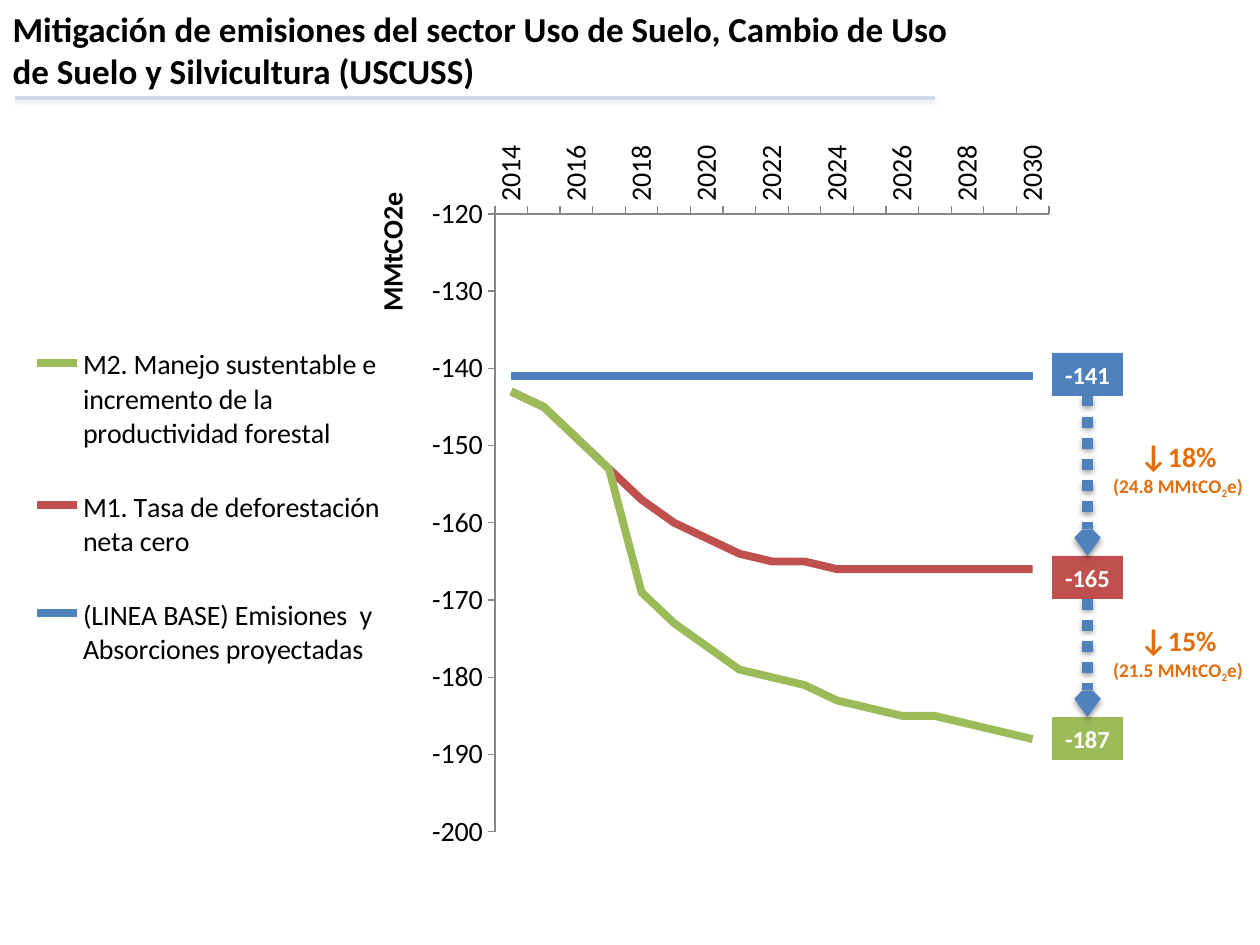
from dataclasses import dataclass

from lxml import etree
from pptx import Presentation
from pptx.chart.data import CategoryChartData
from pptx.dml.color import RGBColor
from pptx.enum.chart import XL_CHART_TYPE, XL_LEGEND_POSITION, XL_TICK_LABEL_POSITION, XL_TICK_MARK
from pptx.enum.dml import MSO_LINE
from pptx.enum.shapes import MSO_CONNECTOR, MSO_SHAPE
from pptx.enum.text import MSO_ANCHOR, MSO_AUTO_SIZE, PP_ALIGN
from pptx.oxml import parse_xml
from pptx.oxml.ns import nsdecls, qn
from pptx.util import Emu, Pt

RECTANGLE, STRAIGHT = MSO_SHAPE.RECTANGLE, MSO_CONNECTOR.STRAIGHT
TOP, MIDDLE = MSO_ANCHOR.TOP, MSO_ANCHOR.MIDDLE
CENTER, LEFT = PP_ALIGN.CENTER, PP_ALIGN.LEFT
TOP_SIDE, BOTTOM_SIDE = 0, 2
PX_PER_INCH = 126
CHART_WIDTH, CHART_HEIGHT = 1062, 724
FONT = "Calibri"
BLUE, RED, GREEN, ORANGE = "4F81BD", "C0504D", "9BBB59", "E46C0A"
BLACK, WHITE, AXIS_GRAY = "000000", "FFFFFF", "868686"
QUARTER_TURN = "-5400000"


@dataclass
class Scenario:
    name: str
    values: list[int]
    color: str
    final_value: str
    box_top: int


@dataclass
class Reduction:
    percent: str
    amount: str
    top: int


YEARS = [str(year) for year in range(2014, 2031)]
SCENARIOS = [
    Scenario("(LINEA BASE) Emisiones  y Absorciones proyectadas",
             [-141] * len(YEARS), BLUE, "-141", 353),
    Scenario("M1. Tasa de deforestación neta cero",
             [-2, -4, -8, -12, -16, -19, -21, -23, -24, -24] + [-25] * 7,
             RED, "-165", 556),
    Scenario("M2. Manejo sustentable e incremento de la productividad forestal",
             [0, 0, 0, 0, -12, -13, -14, -15, -15, -16, -17, -18, -19, -19, -20, -21, -22],
             GREEN, "-187", 717),
]
REDUCTIONS = [Reduction("18%", "24.8", 430), Reduction("15%", "21.5", 614)]


def px(length: int) -> Emu:
    return Emu(round(length * 914400 / PX_PER_INCH))


def rgb(color: str) -> RGBColor:
    return RGBColor.from_string(color)


def apply(target, settings: dict) -> None:
    for attribute, value in settings.items():
        setattr(target, attribute, value)


def style_font(font, size: int, color: str, bold: bool = False) -> None:
    apply(font, {"name": FONT, "size": Pt(size), "bold": bold})
    font.color.rgb = rgb(color)


def add_run(paragraph, text: str, size: int, color: str):
    run = paragraph.add_run()
    run.text = text
    style_font(run.font, size, color, bold=True)
    return run


def add_shadowed_line(slide, start: tuple, end: tuple, width: int):
    line = slide.shapes.add_connector(STRAIGHT, *map(px, start + end))
    line.line.color.rgb = rgb(BLUE)
    line.line.width = Pt(width)
    line._element.spPr.append(parse_xml(
        f'<a:effectLst {nsdecls("a")}><a:outerShdw blurRad="40000" dist="20000" dir="5400000" '
        'rotWithShape="0"><a:srgbClr val="000000"><a:alpha val="38000"/></a:srgbClr>'
        '</a:outerShdw></a:effectLst>'))
    return line


def add_title(slide) -> None:
    title = slide.shapes.title
    apply(title, {"left": 0, "top": 0, "width": px(968), "height": px(98)})
    apply(title.text_frame, {"vertical_anchor": MIDDLE, "auto_size": MSO_AUTO_SIZE.NONE})
    paragraph = title.text_frame.paragraphs[0]
    paragraph.alignment = LEFT
    add_run(paragraph, "Mitigación de emisiones del sector Uso de Suelo, "
            "Cambio de Uso de Suelo y Silvicultura (USCUSS)", 20, BLACK)
    rule = add_shadowed_line(slide, (15, 98), (935, 98), 2)
    rule_color = next(rule._element.spPr.iter(qn("a:srgbClr")))
    etree.SubElement(rule_color, qn("a:alpha")).set("val", "25000")


def place(element, index: int, inner: bool = False, **lengths: int) -> None:
    """Give a chart part a manual layout, in px from the chart's corner."""
    for old_layout in element.findall(qn("c:layout")):
        element.remove(old_layout)
    spans = {"x": CHART_WIDTH, "y": CHART_HEIGHT, "w": CHART_WIDTH, "h": CHART_HEIGHT}
    target = '<c:layoutTarget val="inner"/>' if inner else ""
    modes = "".join(f'<c:{key}Mode val="edge"/>' for key in lengths if key in "xy")
    values = "".join(f'<c:{key} val="{length / spans[key]}"/>' for key, length in lengths.items())
    element.insert(index, parse_xml(
        f'<c:layout {nsdecls("c")}><c:manualLayout>{target}{modes}{values}'
        '</c:manualLayout></c:layout>'))


def turn_upward(body) -> None:
    body.set("rot", QUARTER_TURN)
    body.set("vert", "horz")


def format_axes(chart) -> None:
    years, emissions = chart.category_axis, chart.value_axis
    for axis in (years, emissions):
        axis.has_major_gridlines = False
        axis.format.line.color.rgb = rgb(AXIS_GRAY)
        axis.format.line.width = Pt(0.75)
        style_font(axis.tick_labels.font, 16, BLACK)
    apply(years, {"major_tick_mark": XL_TICK_MARK.INSIDE,
                  "tick_label_position": XL_TICK_LABEL_POSITION.HIGH})
    turn_upward(years._element.find(qn("c:txPr")).find(qn("a:bodyPr")))
    label_skip = parse_xml(f'<c:tickLblSkip {nsdecls("c")} val="2"/>')
    years._element.find(qn("c:noMultiLvlLbl")).addprevious(label_skip)

    apply(emissions, {"minimum_scale": -200, "maximum_scale": -120, "major_unit": 10,
                      "major_tick_mark": XL_TICK_MARK.OUTSIDE})
    apply(emissions.tick_labels, {"number_format": "#,##0", "number_format_is_linked": False})
    axis_title = emissions.axis_title
    add_run(axis_title.text_frame.paragraphs[0], "MMtCO2e", 16, BLACK)
    turn_upward(next(axis_title._element.iter(qn("a:bodyPr"))))
    place(axis_title._element, 1, x=353, y=53)


def add_emissions_chart(slide) -> None:
    data = CategoryChartData(number_format="#,##0")
    data.categories = YEARS
    for scenario in SCENARIOS:
        data.add_series(scenario.name, scenario.values)
    chart = slide.shapes.add_chart(XL_CHART_TYPE.LINE_STACKED, px(15), px(135),
                                   px(CHART_WIDTH), px(CHART_HEIGHT), data).chart
    apply(chart, {"has_title": False, "has_legend": True})
    style_font(chart.font, 16, BLACK)
    for series, scenario in zip(chart.plots[0].series, SCENARIOS):
        series.smooth = False
        series.format.line.color.rgb = rgb(scenario.color)
        series.format.line.width = Pt(4.5)
    format_axes(chart)
    apply(chart.legend, {"position": XL_LEGEND_POSITION.RIGHT, "include_in_layout": False})
    style_font(chart.legend.font, 16, BLACK)
    place(chart.legend._element, 1, x=13, y=174, w=361, h=398)
    plot_area = next(chart._chartSpace.iter(qn("c:plotArea")))
    place(plot_area, 0, inner=True, x=480, y=79, w=554, h=618)


def add_box(slide, left: int, top: int, width: int, height: int, fill: str, anchor):
    box = slide.shapes.add_shape(RECTANGLE, *map(px, (left, top, width, height)))
    box.shadow.inherit = False
    box.fill.solid()
    box.fill.fore_color.rgb = rgb(fill)
    box.line.fill.background()
    apply(box.text_frame, {"word_wrap": False, "vertical_anchor": anchor})
    box.text_frame.paragraphs[0].alignment = CENTER
    return box


def add_final_value(slide, scenario: Scenario):
    box = add_box(slide, 1052, scenario.box_top, 71, 43, scenario.color, MIDDLE)
    box.text_frame.auto_size = MSO_AUTO_SIZE.SHAPE_TO_FIT_TEXT
    add_run(box.text_frame.paragraphs[0], scenario.final_value, 14, WHITE)
    return box


def add_reduction(slide, reduction: Reduction) -> None:
    frame = add_box(slide, 1111, reduction.top, 134, 88, WHITE, TOP).text_frame
    percent, amount = frame.paragraphs[0], frame.add_paragraph()
    amount.alignment = CENTER
    add_run(percent, "↓", 18, ORANGE)
    add_run(percent, reduction.percent, 16, ORANGE)
    add_run(amount, f"({reduction.amount} MMtCO", 11, ORANGE)
    subscript = add_run(amount, "2", 11, ORANGE)
    subscript.font._element.set("baseline", "-25000")
    add_run(amount, "e)", 11, ORANGE)


def add_drop_arrow(slide, upper_box, lower_box) -> None:
    arrow = add_shadowed_line(slide, (0, 0), (0, 0), 6)
    arrow.begin_connect(upper_box, BOTTOM_SIDE)
    arrow.end_connect(lower_box, TOP_SIDE)
    arrow.line.dash_style = MSO_LINE.ROUND_DOT
    outline = arrow.line._get_or_add_ln()
    outline.find(qn("a:prstDash")).set("val", "sysDot")
    head = etree.SubElement(outline, qn("a:tailEnd"))
    for key, value in {"type": "arrow", "w": "sm", "len": "sm"}.items():
        head.set(key, value)


def main() -> None:
    presentation = Presentation()
    apply(presentation, {"slide_width": px(1260), "slide_height": px(945)})
    slide = presentation.slides.add_slide(presentation.slide_layouts[5])
    add_title(slide)
    add_emissions_chart(slide)
    boxes = [add_final_value(slide, scenario) for scenario in SCENARIOS]
    for reduction in REDUCTIONS:
        add_reduction(slide, reduction)
    for upper_box, lower_box in zip(boxes, boxes[1:]):
        add_drop_arrow(slide, upper_box, lower_box)
    presentation.save("out.pptx")


if __name__ == "__main__":
    main()
